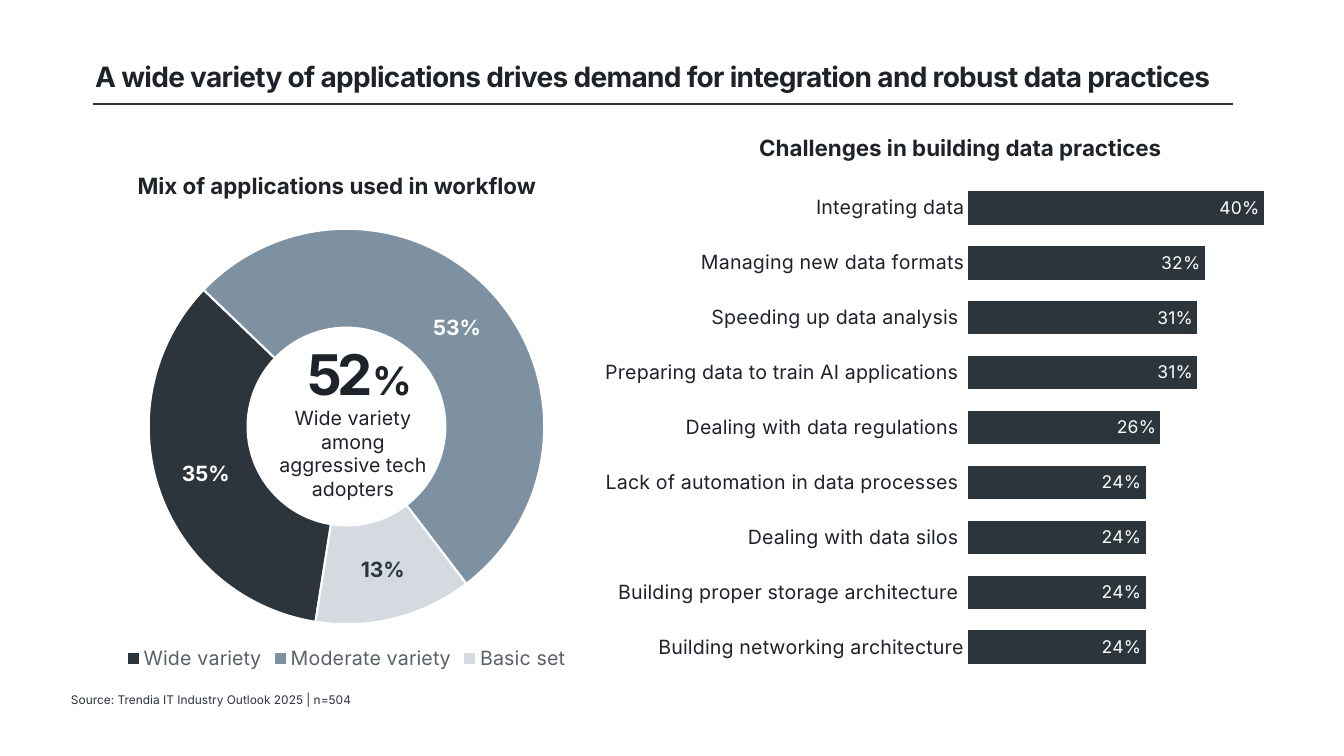
from lxml.etree import SubElement
from pptx import Presentation
from pptx.chart.data import CategoryChartData
from pptx.dml.color import RGBColor
from pptx.enum.chart import XL_CHART_TYPE as CT, XL_LABEL_POSITION as LP
from pptx.enum.chart import XL_LEGEND_POSITION as LEG, XL_TICK_MARK as TM
from pptx.enum.shapes import MSO_CONNECTOR
from pptx.enum.text import MSO_ANCHOR, MSO_AUTO_SIZE, PP_ALIGN
from pptx.oxml import parse_xml
from pptx.oxml.ns import nsdecls, qn
from pptx.util import Pt

COLORS = {"dark": "2C353C", "text": "1D2328", "steel": "7E91A1",
          "pale": "D4DAE0", "grey": "586169", "white": "FFFFFF"}
FONT = "Inter"

TITLE = "A wide variety of applications drives demand for integration and robust data practices"
TITLE_BOX = (85, 43, 1200, 71)
RULE = (93, 104, 1233, 104)
HEADINGS = [
    ("Mix of applications used in workflow", (125, 167, 424, 37)),
    ("Challenges in building data practices", (725, 129, 471, 37)),
]
CENTRE_NUMBER = ("52", "%")
CENTRE_NUMBER_BOX = (298, 335, 127, 78)
CENTRE_NOTE = "Wide variety among aggressive tech adopters"
CENTRE_NOTE_BOX = (269, 401, 168, 105)
SOURCE = "Source: Trendia IT Industry Outlook 2025 | n=504"
SOURCE_BOX = (71, 690, 706, 20)

MIX = [
    ("Wide variety", 0.35, "dark", "white"),
    ("Moderate variety", 0.53, "steel", "white"),
    ("Basic set", 0.13, "pale", "dark"),
]
MIX_BOX = (22, 215, 649, 460)
MIX_PLOT = (0.19, 0.03, 0.62, 0.86)
CHALLENGES = [
    ("Integrating data", 0.40),
    ("Managing new data formats", 0.32),
    ("Speeding up data analysis ", 0.31),
    ("Preparing data to train AI applications ", 0.31),
    ("Dealing with data regulations ", 0.26),
    ("Lack of automation in data processes ", 0.24),
    ("Dealing with data silos ", 0.24),
    ("Building proper storage architecture ", 0.24),
    ("Building networking architecture", 0.24),
]
CHALLENGES_BOX = (550, 165, 775, 515)
CHALLENGES_PLOT = (0.54, 0.03, 0.4, 0.96)

SCALE = 914400 / 100.8


def px(*lengths):
    return [round(n * SCALE) for n in lengths]


def rgb(name):
    return RGBColor.from_string(COLORS[name])


def style(font, size, color="text", bold=False):
    font.name, font.size, font.bold = FONT, Pt(size), bold
    font.color.rgb = rgb(color)


def add_text(s, box, text, size, color="text", bold=False, align=PP_ALIGN.LEFT):
    tf = s.shapes.add_textbox(*px(*box)).text_frame
    tf.word_wrap = True
    tf.text = text
    p = tf.paragraphs[0]
    p.alignment = align
    style(p.runs[0].font, size, color, bold)
    return tf


def add_chart(s, kind, box, rows, plot):
    data = CategoryChartData(number_format="0%")
    data.categories = [row[0] for row in rows]
    data.add_series("Series 1", [row[1] for row in rows])
    chart = s.shapes.add_chart(kind, *px(*box), data).chart
    chart.has_title = False
    chart.has_legend = False
    style(chart.font, 11, "grey")
    area = chart.plots[0]
    area.vary_by_categories = kind == CT.DOUGHNUT
    area.has_data_labels = True
    area.data_labels.show_value = True
    area.data_labels.show_percentage = False
    area.data_labels.number_format = "0%"
    area.data_labels.number_format_is_linked = False
    plot_area = chart.element.find(".//" + qn("c:plotArea"))
    for old in plot_area.findall(qn("c:layout")):
        plot_area.remove(old)
    layout = parse_xml(f"<c:layout {nsdecls('c')}/>")
    manual = SubElement(layout, qn("c:manualLayout"))
    settings = [("layoutTarget", "inner"), ("xMode", "edge"), ("yMode", "edge")]
    for tag, value in settings + list(zip("xywh", plot)):
        SubElement(manual, qn(f"c:{tag}")).set("val", str(value))
    plot_area.insert(0, layout)
    return chart


def add_mix(s):
    chart = add_chart(s, CT.DOUGHNUT, MIX_BOX, MIX, MIX_PLOT)
    chart.has_legend = True
    chart.legend.position = LEG.BOTTOM
    chart.legend.include_in_layout = False
    style(chart.legend.font, 14, "grey")
    ring = chart.plots[0]
    style(ring.data_labels.font, 15, "dark", True)
    for i, (_, _, fill, label) in enumerate(MIX):
        point = ring.series[0].points[i]
        point.format.fill.solid()
        point.format.fill.fore_color.rgb = rgb(fill)
        point.format.line.color.rgb = rgb("white")
        point.format.line.width = Pt(1.5)
        style(point.data_label.font, 15, label, True)
    doughnut = chart.element.find(".//" + qn("c:doughnutChart"))
    for tag, value in (("c:firstSliceAng", 189), ("c:holeSize", 54)):
        node = doughnut.find(qn(tag))
        if node is None:
            node = parse_xml(f"<{tag} {nsdecls('c')}/>")
            doughnut.find(qn("c:holeSize")).addprevious(node)
        node.set("val", str(value))


def add_challenges(s):
    chart = add_chart(s, CT.BAR_CLUSTERED, CHALLENGES_BOX, CHALLENGES[::-1], CHALLENGES_PLOT)
    bars = chart.plots[0]
    bars.gap_width, bars.overlap = 64, -7
    fill = bars.series[0].format.fill
    fill.solid()
    fill.fore_color.rgb = rgb("dark")
    bars.data_labels.position = LP.INSIDE_END
    style(bars.data_labels.font, 12.5, "white")
    names, values = chart.category_axis, chart.value_axis
    names.major_tick_mark = names.minor_tick_mark = TM.NONE
    names.format.line.fill.background()
    style(names.tick_labels.font, 14)
    values.minimum_scale, values.maximum_scale = 0, 0.42
    values.has_major_gridlines = False
    values.visible = False


def add_title(s):
    title = s.shapes.title
    title.left, title.top, title.width, title.height = px(*TITLE_BOX)
    tf = title.text_frame
    tf.text = TITLE
    tf.word_wrap = True
    tf.auto_size = MSO_AUTO_SIZE.NONE
    tf.vertical_anchor = MSO_ANCHOR.MIDDLE
    p = tf.paragraphs[0]
    p.alignment, p.line_spacing = PP_ALIGN.LEFT, 0.9
    style(p.runs[0].font, 20, bold=True)
    p.runs[0]._r.get_or_add_rPr().set("spc", "-50")
    rule = s.shapes.add_connector(MSO_CONNECTOR.STRAIGHT, *px(*RULE))
    rule.line.color.rgb = rgb("dark")
    rule.line.width = Pt(1)
    SubElement(rule.element.spPr, qn("a:effectLst"))


def add_centre(s):
    number, sign = CENTRE_NUMBER
    p = add_text(s, CENTRE_NUMBER_BOX, number, 40, bold=True).paragraphs[0]
    r = p.add_run()
    r.text = sign
    style(r.font, 28, bold=True)
    for r in p.runs:
        r._r.get_or_add_rPr().set("spc", "-400")
    add_text(s, CENTRE_NOTE_BOX, CENTRE_NOTE, 14, align=PP_ALIGN.CENTER)


def main():
    prs = Presentation()
    prs.slide_width, prs.slide_height = px(1344, 756)
    s = prs.slides.add_slide(prs.slide_layouts[5])
    add_mix(s)
    add_title(s)
    add_centre(s)
    add_challenges(s)
    for text, box in HEADINGS:
        add_text(s, box, text, 16, bold=True, align=PP_ALIGN.CENTER)
    tf = add_text(s, SOURCE_BOX, SOURCE, 8.5, "dark")
    tf.margin_left = tf.margin_right = tf.margin_top = tf.margin_bottom = 0
    tf.vertical_anchor = MSO_ANCHOR.MIDDLE
    prs.save("out.pptx")


if __name__ == "__main__":
    main()
